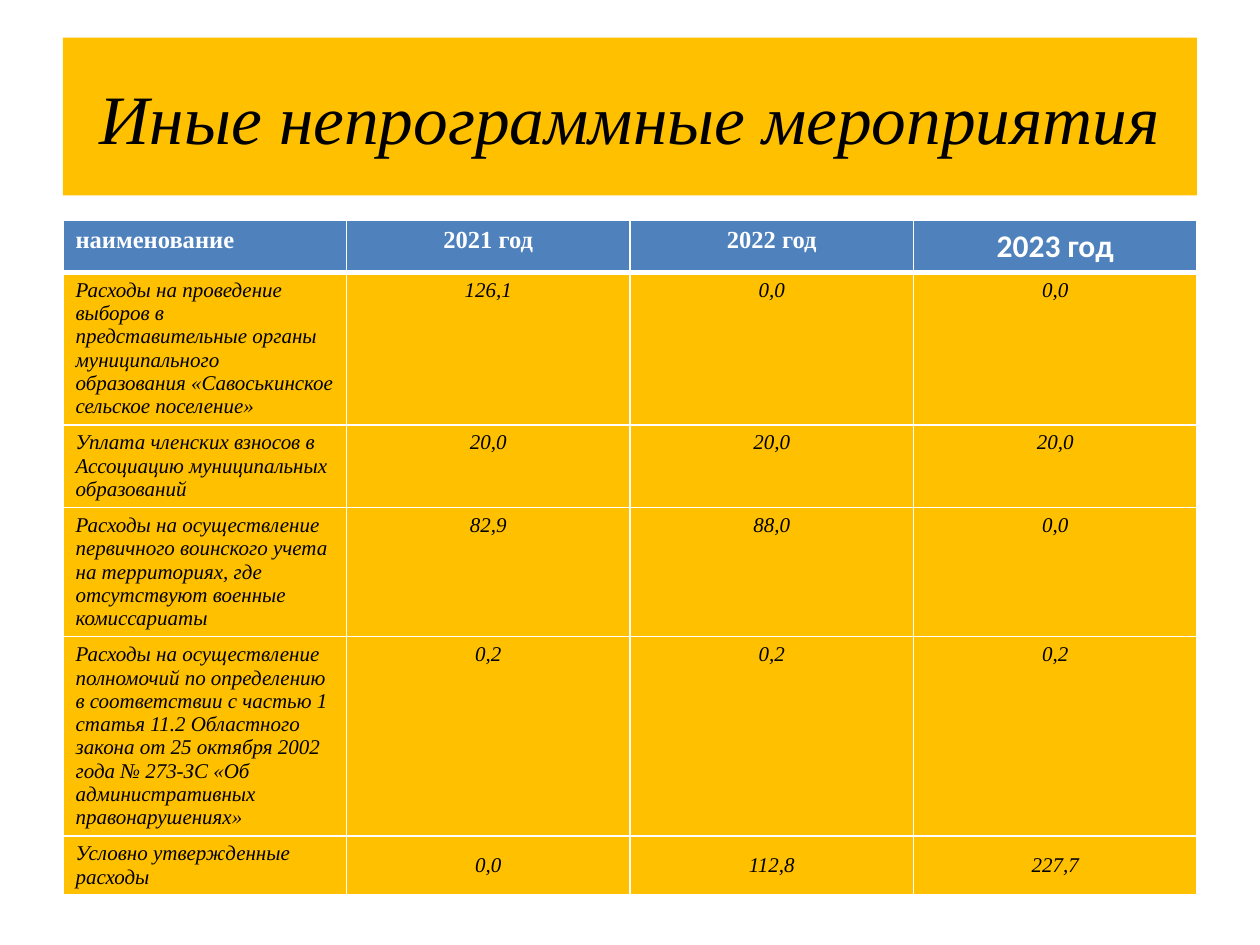
from lxml import etree
from pptx import Presentation
from pptx.dml.color import RGBColor
from pptx.enum.shapes import MSO_SHAPE
from pptx.enum.text import MSO_ANCHOR, PP_ALIGN
from pptx.oxml.ns import qn
from pptx.util import Cm, Pt

RECT = MSO_SHAPE.RECTANGLE
MIDDLE = MSO_ANCHOR.MIDDLE
LEFT, CENTER = PP_ALIGN.LEFT, PP_ALIGN.CENTER
SERIF, SANS = "Times New Roman", "Calibri"
COLORS = {"amber": "FFC000", "blue": "4F81BD", "white": "FFFFFF", "black": "000000"}

ROWS = [
    ["наименование", "2021 год", "2022 год", "2023 год"],
    ["Расходы на проведение выборов в представительные органы муниципального "
     "образования «Савоськинское сельское поселение»", "126,1", "0,0", "0,0"],
    ["Уплата членских взносов в Ассоциацию муниципальных образований",
     "20,0", "20,0", "20,0"],
    ["Расходы на осуществление первичного воинского учета на территориях, "
     "где отсутствуют военные комиссариаты", "82,9", "88,0", "0,0"],
    ["Расходы на осуществление полномочий по определению в соответствии с частью 1 "
     "статья 11.2 Областного закона от 25 октября 2002 года № 273-ЗС "
     "«Об административных правонарушениях»", "0,2", "0,2", "0,2"],
    ["Условно утвержденные расходы", "0,0", "112,8", "227,7"],
]
ROW_HEIGHTS = [1.04, 1.04, 1.04, 1.04, 0.91, 1.04]  # rows grow to fit their text
LAST = len(ROWS) - 1


def write(tf, text, align, size, color, font=SERIF, bold=False, italic=False):
    tf.text = text
    p = tf.paragraphs[0]
    p.alignment = align
    f = p.runs[0].font
    f.name, f.size, f.bold, f.italic = font, Pt(size), bold, italic
    f.color.rgb = RGBColor.from_string(COLORS[color])


def add_borders(cell, top, bottom):
    """Draw white cell borders; top and bottom are widths in points."""
    tc_pr = cell._tc.get_or_add_tcPr()
    for side, width in (("L", 1), ("R", 1), ("T", top), ("B", bottom)):
        ln = etree.SubElement(tc_pr, qn(f"a:ln{side}"), w=str(Pt(width)))
        fill = etree.SubElement(ln, qn("a:solidFill"))
        etree.SubElement(fill, qn("a:srgbClr"), val=COLORS["white"])


prs = Presentation()
prs.slide_width, prs.slide_height = Cm(25.4), Cm(19.05)
s = prs.slides.add_slide(prs.slide_layouts[6])

# Title banner
sp = s.shapes.add_shape(RECT, Cm(1.27), Cm(0.76), Cm(22.86), Cm(3.18))
sp.shadow.inherit = False
sp.fill.solid()
sp.fill.fore_color.rgb = RGBColor.from_string(COLORS["amber"])
sp.line.fill.background()
tf = sp.text_frame
tf.word_wrap = True
tf.vertical_anchor = MIDDLE
write(tf, "Иные непрограммные мероприятия", CENTER, 39.6, "black", italic=True)

# Expense table
table = s.shapes.add_table(len(ROWS), len(ROWS[0]), Cm(1.27), Cm(4.45),
                           Cm(22.86), Cm(sum(ROW_HEIGHTS))).table
for i, (texts, height) in enumerate(zip(ROWS, ROW_HEIGHTS)):
    table.rows[i].height = Cm(height)
    for j, text in enumerate(texts):
        cell = table.cell(i, j)
        add_borders(cell, top=3 if i == 1 else 1, bottom=3 if i == 0 else 1)
        cell.fill.solid()
        cell.fill.fore_color.rgb = RGBColor.from_string(COLORS["blue" if i == 0 else "amber"])
        align = CENTER if j else LEFT
        if i == 0:
            size, font = (18, SANS) if j == 3 else (14, SERIF)
            write(cell.text_frame, text, align, size, "white", font, bold=True)
        else:
            write(cell.text_frame, text, align, 12, "black", italic=True)
        if i == LAST and j:
            cell.vertical_anchor = MIDDLE
            cell.margin_left = cell.margin_right = Cm(0.18)
            cell.margin_top = cell.margin_bottom = Cm(0)

prs.save("out.pptx")
